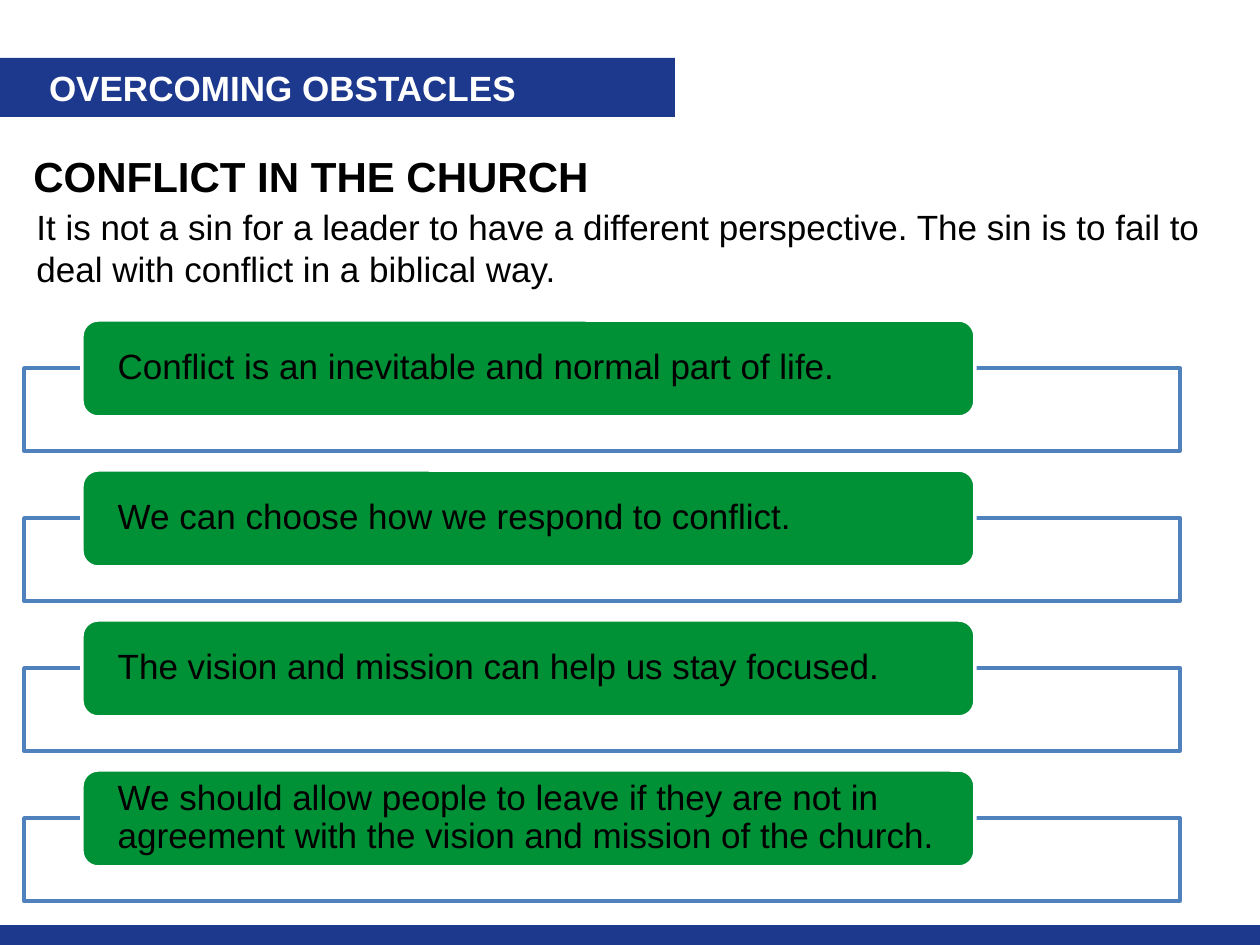
"""Build the slide on conflict in the church."""
from pptx import Presentation
from pptx import util as u
from pptx.dml.color import RGBColor
from pptx.enum import shapes, text

BLUE, GREEN, EDGE, WHITE, BLACK = "1D398D", "009036", "4F81BD", "FFFFFF", "000000"
TITLE = "OVERCOMING OBSTACLES"
NOTES = [
    ("CONFLICT IN THE CHURCH", (21, 144, 1176, 58), 24, True),
    ("It is not a sin for a leader to have a different perspective. "
     "The sin is to fail to deal with conflict in a biblical way.",
     (24, 199, 1194, 97), 20, False),
]
POINTS = [
    "Conflict is an inevitable and normal part of life.",
    "We can choose how we respond to conflict.",
    "The vision and mission can help us stay focused.",
    "We should allow people to leave if they are not in "
    "agreement with the vision and mission of the church.",
]
TOP, STEP = 320, 150


def px(n):
    return u.Emu(round(n * 914400 / 126))


def rgb(code):
    return RGBColor.from_string(code)


def paint(shape, fill, line=None):
    shape.fill.solid()
    shape.fill.fore_color.rgb = rgb(fill)
    if line:
        shape.line.color.rgb = rgb(line)
        shape.line.width = u.Pt(2)
    else:
        shape.line.fill.background()


def block(slide, kind, box, fill, line=None):
    shape = slide.shapes.add_shape(kind, *map(px, box))
    shape.shadow.inherit = False
    paint(shape, fill, line)
    return shape


def write(shape, words, size=20, color=BLACK, bold=False, pad=None, space=None):
    frame = shape.text_frame
    frame.word_wrap = True
    frame.auto_size = text.MSO_AUTO_SIZE.NONE
    if pad:
        frame.vertical_anchor = text.MSO_ANCHOR.MIDDLE
        (frame.margin_left, frame.margin_top,
         frame.margin_right, frame.margin_bottom) = map(px, pad)
    para = frame.paragraphs[0]
    para.alignment = text.PP_ALIGN.LEFT
    if space:
        para.line_spacing = space
    run = para.add_run()
    run.text = words
    font = run.font
    font.name, font.size, font.bold = "Arial", u.Pt(size), bold
    font.color.rgb = rgb(color)


def main():
    deck = Presentation()
    deck.slide_width, deck.slide_height = px(1260), px(945)
    slide = deck.slides.add_slide(deck.slide_layouts[5])
    rect, pill = shapes.MSO_SHAPE.RECTANGLE, shapes.MSO_SHAPE.ROUNDED_RECTANGLE

    title = slide.shapes.title
    title.left, title.top, title.width, title.height = map(px, (0, 58, 675, 59))
    paint(title, BLUE)
    write(title, TITLE, color=WHITE, bold=True, pad=(49, 0, 13, 0))

    for words, box, size, bold in NOTES:
        write(slide.shapes.add_textbox(*map(px, box)), words, size, bold=bold)

    for i, words in enumerate(POINTS):
        top = TOP + i * STEP
        block(slide, rect, (24, top + 48, 1156, 83), WHITE, EDGE)
        card = block(slide, pill, (82, top, 893, 97), GREEN, WHITE)
        write(card, words, pad=(31, 0, 20, 0), space=0.9)

    block(slide, rect, (0, 925, 1260, 20), BLUE)
    deck.save("out.pptx")


if __name__ == "__main__":
    main()
